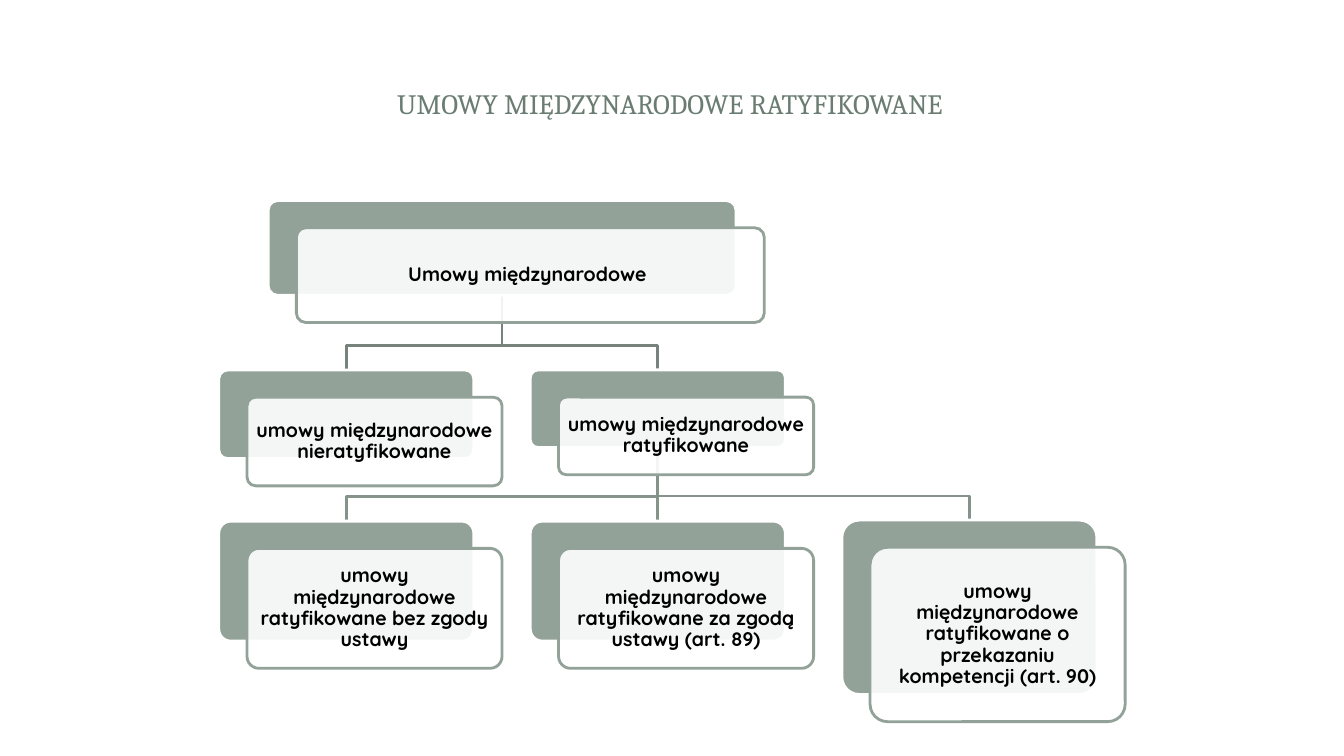
from lxml import etree
from pptx import Presentation
from pptx.dml.color import RGBColor
from pptx.enum.shapes import MSO_CONNECTOR as Connector, MSO_SHAPE as Preset
from pptx.enum.text import MSO_ANCHOR as Anchor, PP_ALIGN as Align
from pptx.oxml.ns import qn
from pptx.util import Inches, Pt

WHITE = RGBColor(0xFF, 0xFF, 0xFF)
BLACK = RGBColor(0x00, 0x00, 0x00)
SAGE = RGBColor(0x93, 0xA2, 0x99)
TITLE_GREEN = RGBColor(0x6B, 0x7D, 0x72)
UPPER_BRANCH = RGBColor(0x76, 0x82, 0x7B)
LOWER_BRANCH = RGBColor(0x85, 0x93, 0x8B)

COLUMNS = [2.17 + 3.09 * column for column in range(3)]
CARD_WIDTH = 2.53
PANEL_SHIFT = 0.28, 0.27
BEND_RISE = 0.24


def write(frame, text, font_name, size, color, bold=False):
    frame.word_wrap = True
    frame.vertical_anchor = Anchor.MIDDLE
    para = frame.paragraphs[0]
    para.text = text
    para.alignment = Align.CENTER
    para.font.name = font_name
    para.font.size = Pt(size)
    para.font.bold = bold
    para.font.color.rgb = color
    return para


def add_title(page, text):
    box = page.shapes.add_textbox(Inches(0.62), Inches(0.45), Inches(12.05), Inches(1.14))
    write(box.text_frame, text, "Cambria", 20, TITLE_GREEN)


def add_plate(page, left, top, width, height, fill, line):
    plate = page.shapes.add_shape(
        Preset.ROUNDED_RECTANGLE, Inches(left), Inches(top), Inches(width), Inches(height))
    plate.adjustments[0] = 0.1
    plate.shadow.inherit = False
    plate.fill.solid()
    plate.fill.fore_color.rgb = fill
    plate.line.color.rgb = line
    plate.line.width = Pt(2)
    return plate


def add_card(page, left, top, width, height, text):
    back = add_plate(page, left, top, width, height, SAGE, WHITE)
    shift_x, shift_y = PANEL_SHIFT
    panel = add_plate(page, left + shift_x, top + shift_y, width, height, WHITE, SAGE)
    color = panel._element.spPr.find(qn("a:solidFill")).find(qn("a:srgbClr"))
    etree.SubElement(color, qn("a:alpha")).set("val", "90000")
    frame = panel.text_frame
    frame.margin_left = frame.margin_right = Inches(0.06)
    frame.margin_top = frame.margin_bottom = Inches(0.06)
    write(frame, text, "Quicksand", 14, BLACK, bold=True).line_spacing = 0.9
    return back


def add_straight_branch(page, parent, child):
    middle = parent.left + parent.width // 2
    branch = page.shapes.add_connector(
        Connector.STRAIGHT, middle, parent.top + parent.height, middle, child.top)
    branch.begin_connect(parent, 2)
    branch.end_connect(child, 0)
    etree.SubElement(branch._element.spPr, qn("a:effectLst"))
    return branch


def add_bent_branch(page, parent, child):
    start_x = parent.left + parent.width // 2
    end_x = child.left + child.width // 2
    bend_y = child.top - Inches(BEND_RISE)
    builder = page.shapes.build_freeform(start_x, parent.top + parent.height)
    builder.add_line_segments(
        [(start_x, bend_y), (end_x, bend_y), (end_x, child.top)], close=False)
    branch = builder.convert_to_shape()
    branch.fill.background()
    branch.shadow.inherit = False
    return branch


def add_branch(page, parent, child, color):
    add = add_straight_branch if parent.left == child.left else add_bent_branch
    branch = add(page, parent, child)
    branch.line.color.rgb = color
    branch.line.width = Pt(2)
    page.shapes._spTree.insert(2, branch._element)


def main():
    deck = Presentation()
    deck.slide_width, deck.slide_height = Inches(13.33), Inches(7.5)
    page = deck.slides.add_slide(deck.slide_layouts[6])
    add_title(page, "UMOWY MIĘDZYNARODOWE RATYFIKOWANE")

    treaties = add_card(page, 2.66, 1.99, 4.64, 0.94, "Umowy międzynarodowe ")
    unratified, ratified, *kinds = [
        add_card(page, COLUMNS[column], top, CARD_WIDTH, height, text)
        for column, top, height, text in [
            (0, 3.67, 0.88, "umowy międzynarodowe nieratyfikowane"),
            (1, 3.67, 0.77, "umowy międzynarodowe ratyfikowane"),
            (0, 5.17, 1.19, "umowy międzynarodowe ratyfikowane bez zgody ustawy"),
            (1, 5.17, 1.19, "umowy międzynarodowe ratyfikowane za zgodą ustawy (art. 89)"),
            (2, 5.16, 1.73,
             "umowy międzynarodowe ratyfikowane o przekazaniu kompetencji (art. 90)"),
        ]
    ]
    for child in (unratified, ratified):
        add_branch(page, treaties, child, UPPER_BRANCH)
    for child in kinds:
        add_branch(page, ratified, child, LOWER_BRANCH)
    deck.save("out.pptx")


if __name__ == "__main__":
    main()
